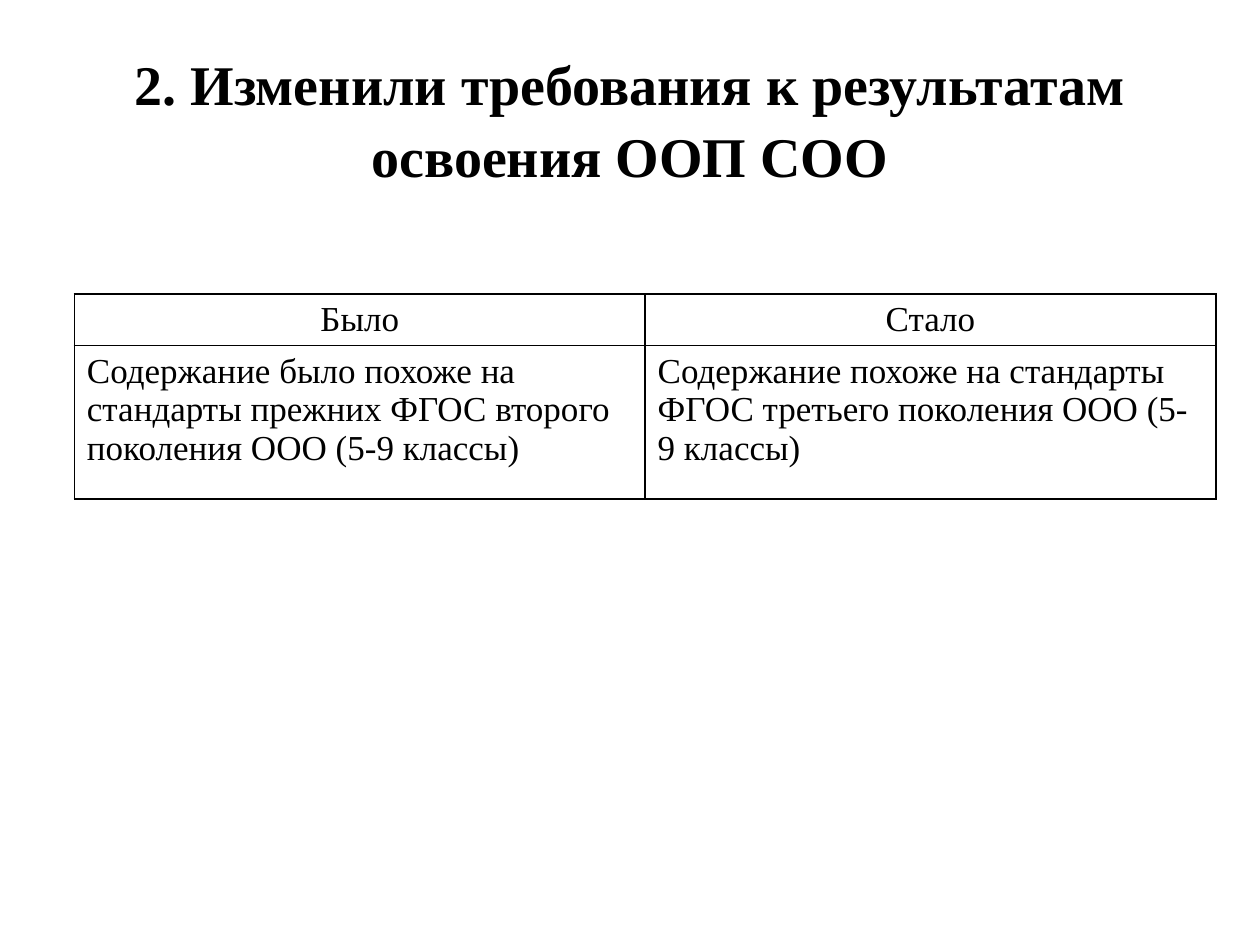
from lxml import etree
from pptx import Presentation
from pptx.dml.color import RGBColor
from pptx.enum import text
from pptx.oxml.ns import qn
from pptx.util import Pt

# Content
TITLE = "2. Изменили требования к результатам освоения ООП СОО"
ROWS = [
    ("Было", "Стало"),
    ("Содержание было похоже на стандарты прежних ФГОС второго поколения ООО (5-9 классы)",
     "Содержание похоже на стандарты ФГОС третьего поколения ООО (5-9 классы)"),
]
ROW_HEIGHTS = (29.4, 87.84)
COL_WIDTH = 326.16
FONT, BLACK = "Times New Roman", "000000"
CENTER, LEFT = text.PP_ALIGN.CENTER, text.PP_ALIGN.LEFT


def color(value):
    return RGBColor.from_string(value)


def write(tf, words, size=20, bold=False, align=LEFT, spacing=None):
    p = tf.paragraphs[0]
    p.alignment = align
    p.line_spacing = spacing
    r = p.add_run()
    r.text = words
    r.font.name, r.font.size, r.font.bold = FONT, Pt(size), bold
    r.font.color.rgb = color(BLACK)


def add_borders(cell, width=1):
    tc_pr = cell._tc.get_or_add_tcPr()
    for i, side in enumerate(("lnL", "lnR", "lnT", "lnB")):
        ln = etree.Element(qn("a:" + side), w=str(Pt(width)))
        fill = etree.SubElement(ln, qn("a:solidFill"))
        etree.SubElement(fill, qn("a:srgbClr"), val=BLACK)
        tc_pr.insert(i, ln)


prs = Presentation()
prs.slide_width, prs.slide_height = Pt(720), Pt(540)
s = prs.slides.add_slide(prs.slide_layouts[5])

# Title
title = s.shapes.title
title.left, title.top, title.width, title.height = Pt(36), Pt(21.6), Pt(648), Pt(90)
title.text_frame.vertical_anchor = text.MSO_ANCHOR.MIDDLE
write(title.text_frame, TITLE, size=32, bold=True, align=CENTER, spacing=1.08)

# Comparison table
table = s.shapes.add_table(len(ROWS), len(ROWS[0]), Pt(42.5), Pt(168),
                           Pt(COL_WIDTH * len(ROWS[0])), Pt(sum(ROW_HEIGHTS))).table
table.first_row = table.horz_banding = False
for col in table.columns:
    col.width = Pt(COL_WIDTH)
for i, (words, height) in enumerate(zip(ROWS, ROW_HEIGHTS)):
    table.rows[i].height = Pt(height)
    for j, value in enumerate(words):
        cell = table.cell(i, j)
        cell.fill.background()
        add_borders(cell)
        write(cell.text_frame, value, align=CENTER if i == 0 else LEFT)

prs.save("out.pptx")
